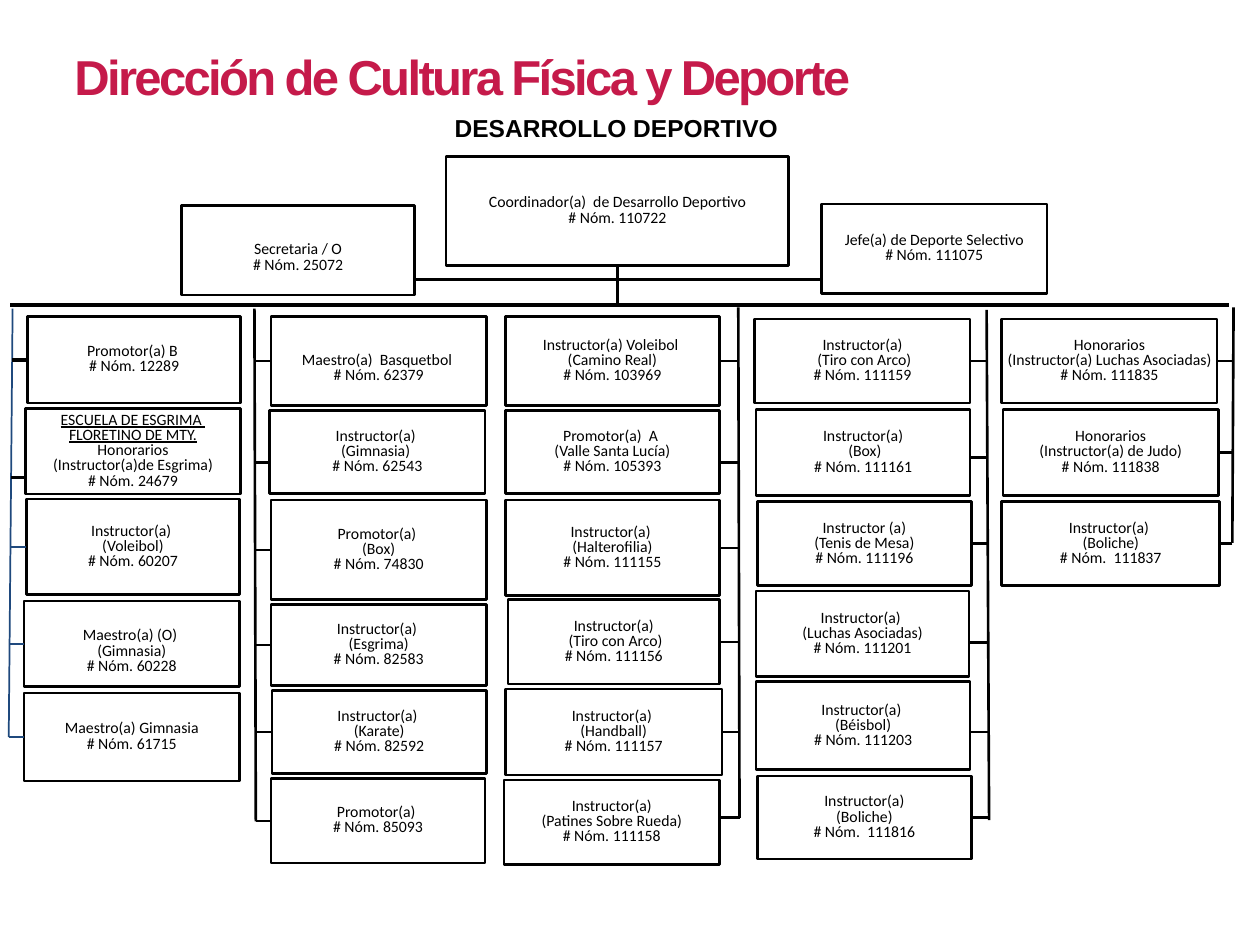
"""Builds the organisation chart of the sports development area."""
from dataclasses import dataclass

from lxml import etree
from pptx import Presentation
from pptx.dml.color import RGBColor
from pptx.enum.shapes import MSO_CONNECTOR, MSO_SHAPE
from pptx.enum.text import MSO_ANCHOR, PP_ALIGN
from pptx.oxml.ns import qn
from pptx.shapes.autoshape import Shape
from pptx.shapes.connector import Connector
from pptx.slide import Slide
from pptx.util import Pt

STRAIGHT = MSO_CONNECTOR.STRAIGHT
RECTANGLE = MSO_SHAPE.RECTANGLE
MIDDLE = MSO_ANCHOR.MIDDLE
CENTER, LEFT_ALIGNED = PP_ALIGN.CENTER, PP_ALIGN.LEFT

BLACK = RGBColor(0x00, 0x00, 0x00)
WHITE = RGBColor(0xFF, 0xFF, 0xFF)
CRIMSON = RGBColor(0xC5, 0x1A, 0x4A)
BLUE = RGBColor(0x1F, 0x49, 0x7D)

LEFT_SIDE, BOTTOM_SIDE, RIGHT_SIDE = 1, 2, 3
JOIN_TOLERANCE = 2.5
TEXT_DROP = 8.8


@dataclass(frozen=True)
class Stroke:
    color: RGBColor = BLACK
    weight: float = 1.5


THIN_BLUE = Stroke(BLUE, 1)
HEAVY = Stroke(weight=2.25)
REGULAR = Stroke()


@dataclass(frozen=True)
class Post:
    left: float
    top: float
    width: float
    height: float
    lines: tuple[str, ...]
    branch_y: float = 0
    branch: Stroke = REGULAR
    underlined: int = 0
    drop: float = 0


@dataclass(frozen=True)
class Column:
    spine: tuple[float, float, float, float]
    side: int
    posts: tuple[Post, ...]
    stroke: Stroke = REGULAR


COORDINATOR = Post(254.9, 89.3, 195.8, 62.6, ("Coordinador(a)  de Desarrollo Deportivo", "# Nóm. 110722"))
SECRETARY = Post(103.7, 117.4, 133.2, 51.1, ("Secretaria / O", "# Nóm. 25072"), drop=TEXT_DROP)
SELECTIVE_HEAD = Post(469.4, 116.6, 128.9, 51.1, ("Jefe(a) de Deporte Selectivo", "# Nóm. 111075"))

COLUMNS = (
    Column((7.2, 176.4, 5, 421.2), LEFT_SIDE, (
        Post(15.8, 180.7, 121.7, 49.7, ("Promotor(a) B ", "# Nóm. 12289"), 207.4, HEAVY),
        Post(14.4, 233.3, 123.1, 49, ("ESCUELA DE ESGRIMA ", "FLORETINO DE MTY.", "Honorarios",
                                      "(Instructor(a)de Esgrima)", "# Nóm. 24679"), 272.9, underlined=2),
        Post(15.1, 285.1, 121.7, 54.7, ("Instructor(a) ", "(Voleibol)", "# Nóm. 60207"), 310.3, THIN_BLUE),
        Post(13.7, 343.4, 123.1, 49, ("Maestro(a) (O) ", "(Gimnasia)", "# Nóm. 60228"), 365.8, THIN_BLUE,
             drop=TEXT_DROP),
        Post(13.7, 396, 123.1, 50.4, ("Maestro(a) Gimnasia", "# Nóm. 61715"), 420.5, THIN_BLUE),
    ), THIN_BLUE),
    Column((145.4, 176.4, 146.2, 469.4), LEFT_SIDE, (
        Post(154.8, 180.7, 123.1, 51.1, ("Maestro(a)  Basquetbol ", "# Nóm. 62379"), 205.2, drop=TEXT_DROP),
        Post(154.1, 234.7, 123.1, 47.5, ("Instructor(a) ", "(Gimnasia) ", "# Nóm. 62543"), 264.2),
        Post(154.8, 285.8, 123.1, 56.9, ("Promotor(a) ", "(Box)", "# Nóm. 74830"), 311.8),
        Post(154.8, 345.6, 123.1, 46.1, ("Instructor(a) ", "(Esgrima)", "# Nóm. 82583"), 370.1),
        Post(155.5, 394.6, 122.4, 47.5, ("Instructor(a) ", "(Karate)", "# Nóm. 82592"), 417.6),
        Post(154.8, 445, 122.4, 48.2, ("Promotor(a) ", "# Nóm. 85093"), 469.4),
    )),
    Column((421.9, 175.7, 422.6, 467.3), RIGHT_SIDE, (
        Post(288.7, 180.7, 122.4, 51.1, ("Instructor(a) Voleibol ", "(Camino Real)", "# Nóm. 103969"), 205.9),
        Post(288.7, 234.7, 122.4, 47.5, ("Promotor(a)  A ", "(Valle Santa Lucía)", "# Nóm. 105393"), 264.2),
        Post(288.7, 285.8, 122.4, 54.7, ("Instructor(a) ", "(Halterofilia)", "# Nóm. 111155"), 311.8),
        Post(290.2, 342.7, 121, 48.2, ("Instructor(a)", " (Tiro con Arco)", "# Nóm. 111156"), 365.8),
        Post(288.7, 393.8, 123.8, 49, ("Instructor(a) ", "(Handball)", "# Nóm. 111157"), 418.3),
        Post(288, 445.7, 123.1, 48.2, ("Instructor(a)", "(Patines Sobre Rueda)", "# Nóm. 111158"), 467.3),
    )),
    Column((563.8, 177.1, 565.2, 468.7), RIGHT_SIDE, (
        Post(431.3, 182.2, 123.1, 48.2, ("Instructor(a)", " (Tiro con Arco)", "# Nóm. 111159"), 207.4),
        Post(432, 234, 122.4, 49, ("Instructor(a)", " (Box)", "# Nóm. 111161"), 261.4),
        Post(432.7, 286.6, 122.4, 48.2, ("Instructor (a)", "(Tenis de Mesa)", "# Nóm. 111196"), 311.8),
        Post(432, 337.7, 121.7, 49, ("Instructor(a) ", "(Luchas Asociadas)", "# Nóm. 111201"), 367.2),
        Post(432, 389.5, 122.4, 50.4, ("Instructor(a) ", "(Béisbol)", "# Nóm. 111203"), 418.3),
        Post(432.7, 443.5, 122.4, 47.5, ("Instructor(a)", "(Boliche)", "# Nóm.  111816"), 468.7),
    )),
    Column((704.9, 175.7, 704.2, 310.3), RIGHT_SIDE, (
        Post(572.4, 182.2, 123.1, 48.2, ("Honorarios", "(Instructor(a) Luchas Asociadas)", "# Nóm. 111835"), 205.9),
        Post(573.1, 234, 123.1, 49, ("Honorarios", "(Instructor(a) de Judo)", "# Nóm. 111838"), 260.6),
        Post(572.4, 286.6, 124.6, 48.2, ("Instructor(a) ", "(Boliche)", "# Nóm.  111837"), 310.3),
    )),
)


def draw_line(slide: Slide, x1: float, y1: float, x2: float, y2: float, stroke: Stroke = REGULAR) -> Connector:
    line = slide.shapes.add_connector(STRAIGHT, Pt(x1), Pt(y1), Pt(x2), Pt(y2))
    line.line.color.rgb = stroke.color
    line.line.width = Pt(stroke.weight)
    etree.SubElement(line._element.spPr, qn("a:effectLst"))
    return line


def draw_post(slide: Slide, post: Post) -> Shape:
    box = slide.shapes.add_shape(RECTANGLE, Pt(post.left), Pt(post.top), Pt(post.width), Pt(post.height))
    box.shadow.inherit = False
    box.fill.solid()
    box.fill.fore_color.rgb = WHITE
    box.line.color.rgb = BLACK
    box.line.width = Pt(REGULAR.weight)
    frame = box.text_frame
    frame.word_wrap = False
    frame.vertical_anchor = MIDDLE
    frame.margin_top = Pt(3.6 + post.drop)
    frame.text = "\n".join(post.lines)
    for position, paragraph in enumerate(frame.paragraphs):
        paragraph.alignment = CENTER
        paragraph.line_spacing = 0.8
        font = paragraph.runs[0].font
        font.name, font.size, font.color.rgb = "Calibri", Pt(9), BLACK
        if position < post.underlined:
            font.underline = True
    return box


def draw_column(slide: Slide, column: Column) -> None:
    x1, y1, x2, y2 = column.spine
    draw_line(slide, x1, y1, x2, y2, column.stroke)
    for post in column.posts:
        box = draw_post(slide, post)
        middle = post.top + post.height / 2
        joined = abs(post.branch_y - middle) < JOIN_TOLERANCE
        y = middle if joined else post.branch_y
        spine_x = x1 + (x2 - x1) * (y - y1) / (y2 - y1)
        edge = post.left if column.side == LEFT_SIDE else post.left + post.width
        branch = draw_line(slide, spine_x, y, edge, y, post.branch)
        if joined:
            branch.end_connect(box, column.side)


def format_heading(heading: Shape, text: str, size: float, color: RGBColor) -> None:
    heading.text_frame.text = text
    paragraph = heading.text_frame.paragraphs[0]
    paragraph.alignment = LEFT_ALIGNED
    font = paragraph.runs[0].font
    font.name, font.size, font.bold, font.color.rgb = "Arial", Pt(size), True, color


def main() -> None:
    deck = Presentation()
    deck.slide_width, deck.slide_height = Pt(720), Pt(540)
    slide = deck.slides.add_slide(deck.slide_layouts[5])

    title = slide.shapes.title
    title.left, title.top, title.width, title.height = Pt(35.3), Pt(23), Pt(490.3), Pt(41)
    format_heading(title, "Dirección de Cultura Física y Deporte", 28, CRIMSON)
    title.text_frame.paragraphs[0].runs[0]._r.get_or_add_rPr().set("spc", "-150")

    area = slide.shapes.add_textbox(Pt(252.7), Pt(61.2), Pt(200.9), Pt(24.5))
    area.text_frame.word_wrap = False
    format_heading(area, "DESARROLLO DEPORTIVO", 14, BLACK)

    draw_line(slide, 236.9, 159.8, 469.4, 159.8)
    coordinator = draw_post(slide, COORDINATOR)
    stem_x = COORDINATOR.left + COORDINATOR.width / 2
    stem = draw_line(slide, stem_x, COORDINATOR.top + COORDINATOR.height, stem_x, 174.2)
    stem.begin_connect(coordinator, BOTTOM_SIDE)
    draw_post(slide, SECRETARY)
    draw_post(slide, SELECTIVE_HEAD)
    draw_line(slide, 5.8, 174.2, 702, 174.2, HEAVY)
    for column in COLUMNS:
        draw_column(slide, column)

    deck.save("out.pptx")


if __name__ == "__main__":
    main()
